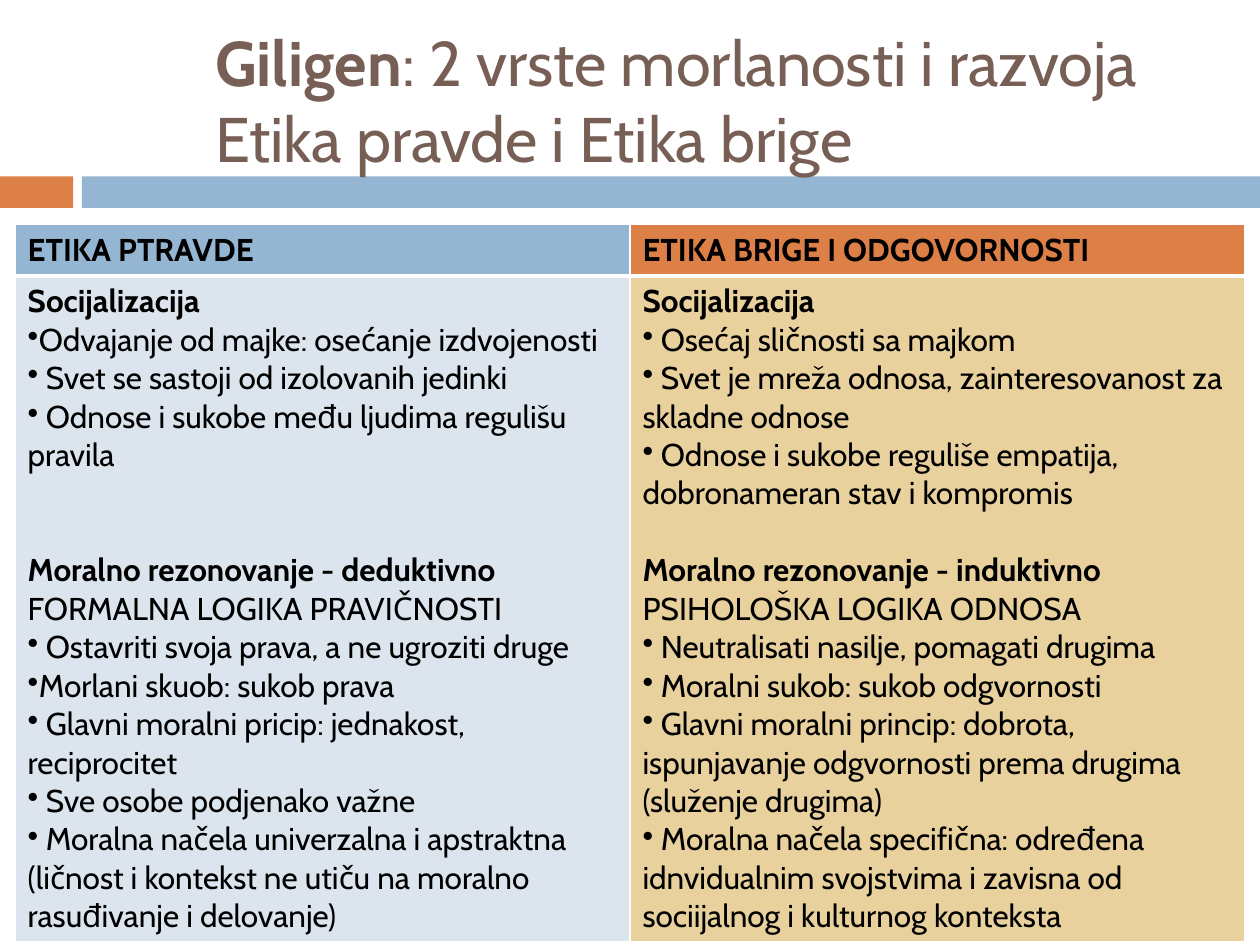
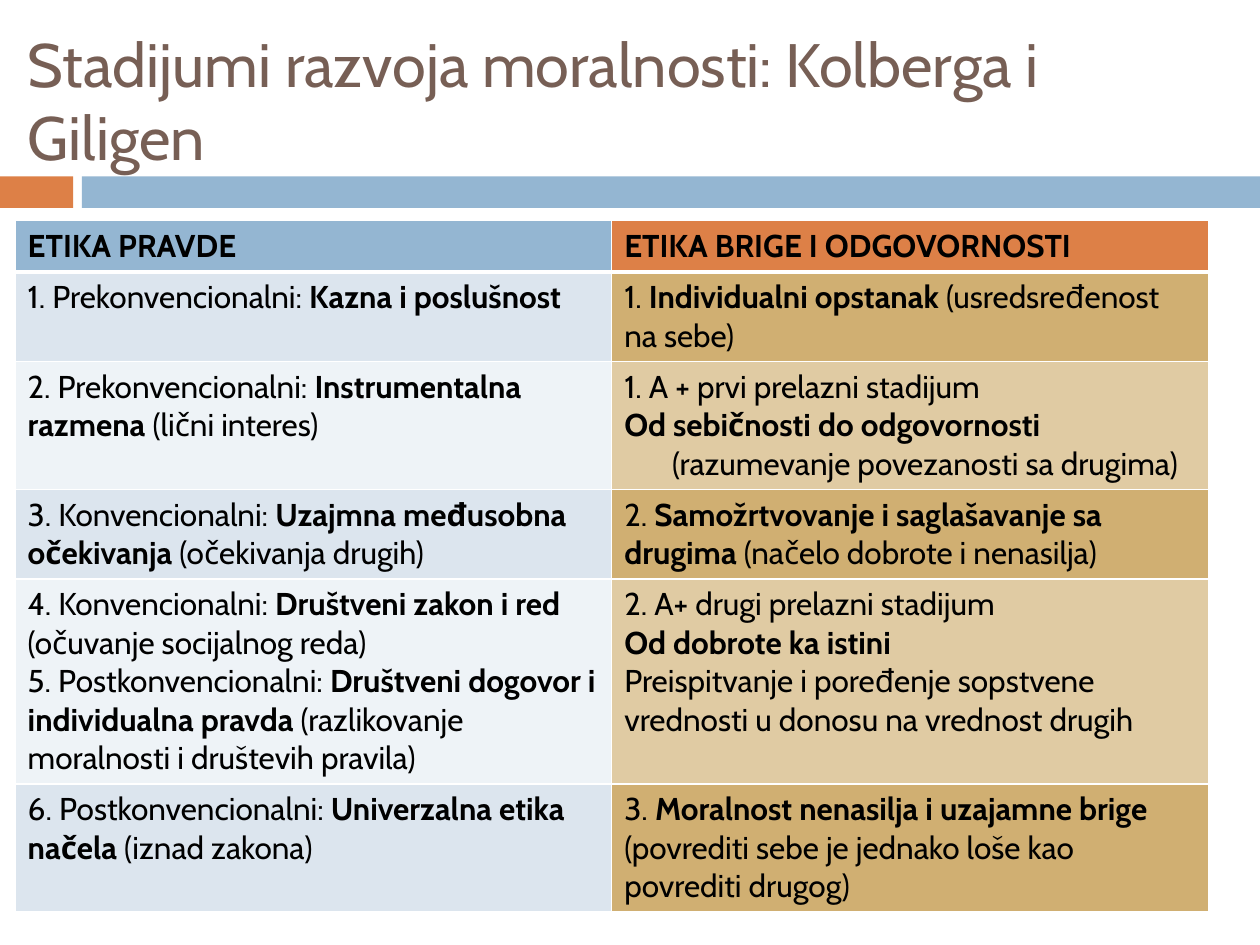
from dataclasses import dataclass

from lxml.etree import SubElement
from pptx import Presentation
from pptx.dml.color import RGBColor
from pptx.enum.shapes import MSO_SHAPE
from pptx.enum.text import MSO_ANCHOR, MSO_AUTO_SIZE, PP_ALIGN
from pptx.oxml.ns import qn
from pptx.util import Inches, Pt

FONT = "Cabin"
BODY_SIZE = 18
COLORS = {
    "title": "775F55",
    "text": "000000",
    "border": "FFFFFF",
    "blue": "94B6D2",
    "orange": "DD8047",
    "blue_mid": "DCE5EE",
    "blue_pale": "EEF3F7",
    "sand": "E8D19D",
    "ochre": "D0AF72",
    "ochre_pale": "E0CBA3",
}


@dataclass
class Band:
    left: float
    width: float
    color: str


@dataclass
class Para:
    """Stars in the text switch bold on and off."""
    text: str
    bullet: bool = False
    gap: float = 0  # space before, in points
    hanging: float = 0  # hanging indent, in inches


@dataclass
class Row:
    height: float
    cells: list[list[Para]]


@dataclass
class Page:
    title: list[str]  # one entry per forced line
    title_left: float
    title_width: float
    title_size: int
    table_top: float
    table_width: float
    body_colors: list[tuple[str, str]]  # repeated down the body rows
    rows: list[Row]


BANDS = [Band(0, 0.58, "orange"), Band(0.65, 9.35, "blue")]


def bullets(*texts: str) -> list[Para]:
    return [Para(text, bullet=True) for text in texts]


def header(left: str, right: str) -> Row:
    return Row(0.41, [[Para(f"*{left}*")], [Para(f"*{right}*")]])


def rgb(name: str) -> RGBColor:
    return RGBColor.from_string(COLORS[name])


def add_spans(para, text: str, size: float, color: str) -> None:
    for index, piece in enumerate(text.split("*")):
        if piece:
            span = para.add_run()
            span.text = piece
            span.font.name = FONT
            span.font.size = Pt(size)
            span.font.bold = index % 2 == 1
            span.font.color.rgb = rgb(color)


def add_bands(layout, page) -> None:
    """Draw the bands and hand them over to the layout."""
    for band in BANDS:
        shape = page.shapes.add_shape(
            MSO_SHAPE.RECTANGLE, Inches(band.left), Inches(1.4),
            Inches(band.width), Inches(0.25))
        shape.shadow.inherit = False
        shape.fill.solid()
        shape.fill.fore_color.rgb = rgb(band.color)
        shape.line.fill.background()
        layout.shapes._spTree.append(shape._element)


def set_title(page, content: Page) -> None:
    box = page.shapes.title
    box.left, box.top = Inches(content.title_left), Inches(0.25)
    box.width, box.height = Inches(content.title_width), Inches(1.08)
    frame = box.text_frame
    frame.word_wrap = True
    frame.auto_size = MSO_AUTO_SIZE.NONE
    frame.vertical_anchor = MSO_ANCHOR.MIDDLE
    para = frame.paragraphs[0]
    para.alignment = PP_ALIGN.LEFT
    for index, line in enumerate(content.title):
        if index:
            para.add_line_break()
        add_spans(para, line, content.title_size, "title")


def set_borders(cell, top: float, bottom: float) -> None:
    properties = cell._tc.get_or_add_tcPr()
    for side, width in (("L", 1), ("R", 1), ("T", top), ("B", bottom)):
        line = SubElement(properties, qn(f"a:ln{side}"), w=str(Pt(width)))
        fill = SubElement(line, qn("a:solidFill"))
        SubElement(fill, qn("a:srgbClr"), val=COLORS["border"])


def fill_cell(cell, paras: list[Para], color: str) -> None:
    cell.fill.solid()
    cell.fill.fore_color.rgb = rgb(color)
    frame = cell.text_frame
    for index, item in enumerate(paras):
        para = frame.add_paragraph() if index else frame.paragraphs[0]
        if item.gap:
            para.space_before = Pt(item.gap)
        properties = para._p.get_or_add_pPr()
        if item.hanging:
            properties.set("marL", str(Inches(item.hanging)))
            properties.set("indent", str(-Inches(item.hanging)))
        if item.bullet:
            SubElement(properties, qn("a:buChar"), char="•")
        add_spans(para, item.text, BODY_SIZE, "text")


def add_comparison(page, content: Page) -> None:
    height = sum(row.height for row in content.rows)
    table = page.shapes.add_table(
        len(content.rows), 2, Inches(0.12), Inches(content.table_top),
        Inches(content.table_width), Inches(height)).table
    table.horz_banding = False
    for column in table.columns:
        column.width = Inches(content.table_width / 2)
    for number, row in enumerate(content.rows):
        table.rows[number].height = Inches(row.height)
        colors = ("blue", "orange")
        if number:
            colors = content.body_colors[(number - 1) % len(content.body_colors)]
        for column, paras in enumerate(row.cells):
            cell = table.cell(number, column)
            set_borders(cell, 3 if number == 1 else 1, 3 if number == 0 else 1)
            fill_cell(cell, paras, colors[column])


PAGES = [
    # Two kinds of morality
    Page(
        ["*Giligen*: 2 vrste morlanosti i razvoja", "Etika pravde i Etika brige"],
        1.61, 7.97, 36, 1.78, 9.76, [("blue_mid", "sand")],
        [
            header("ETIKA PTRAVDE", "ETIKA BRIGE I ODGOVORNOSTI"),
            Row(5.28, [
                [
                    Para("*Socijalizacija*"),
                    *bullets(
                        "Odvajanje od majke: osećanje izdvojenosti",
                        " Svet se sastoji od izolovanih jedinki",
                        " Odnose i sukobe među ljudima regulišu pravila"),
                    Para("*Moralno rezonovanje - deduktivno*", gap=44),
                    Para("FORMALNA LOGIKA PRAVIČNOSTI"),
                    *bullets(
                        " Ostavriti svoja prava, a ne ugroziti druge",
                        "Morlani skuob: sukob prava",
                        " Glavni moralni pricip: jednakost, reciprocitet",
                        " Sve osobe podjenako važne",
                        " Moralna načela univerzalna i apstraktna (ličnost i "
                        "kontekst ne utiču na moralno rasuđivanje i delovanje)"),
                ],
                [
                    Para("*Socijalizacija*"),
                    *bullets(
                        " Osećaj sličnosti sa majkom",
                        " Svet je mreža odnosa, zainteresovanost za skladne odnose",
                        " Odnose i sukobe reguliše empatija, dobronameran stav "
                        "i kompromis"),
                    Para("*Moralno rezonovanje - induktivno*", gap=22),
                    Para("PSIHOLOŠKA LOGIKA ODNOSA"),
                    *bullets(
                        " Neutralisati nasilje, pomagati drugima",
                        " Moralni sukob: sukob odgvornosti",
                        " Glavni moralni princip: dobrota, ispunjavanje "
                        "odgvornosti prema drugima (služenje drugima)",
                        " Moralna načela specifična: određena idnvidualnim "
                        "svojstvima i zavisna od sociijalnog i kulturnog konteksta"),
                ],
            ]),
        ]),
    # Stages of moral development
    Page(
        ["Stadijumi razvoja moralnosti: Kolberga i Giligen"],
        0.12, 9.47, 35, 1.75, 9.47,
        [("blue_mid", "ochre"), ("blue_pale", "ochre_pale")],
        [
            header("ETIKA PRAVDE", "ETIKA BRIGE I ODGOVORNOSTI"),
            Row(0.71, [
                [Para("1. Prekonvencionalni: *Kazna i poslušnost*")],
                [Para("1. *Individualni opstanak* (usredsređenost na sebe)")],
            ]),
            Row(1.01, [
                [Para("2. Prekonvencionalni: *Instrumentalna razmena *"
                      "(lični interes)")],
                [Para("1. A + prvi prelazni stadijum", hanging=0.38),
                 Para("*Od sebičnosti do odgovornosti *"
                      "(razumevanje povezanosti sa drugima)", hanging=0.38)],
            ]),
            Row(0.71, [
                [Para("3. Konvencionalni: *Uzajmna međusobna očekivanja* "
                      "(očekivanja drugih)")],
                [Para("2. *Samožrtvovanje i saglašavanje sa drugima *"
                      "(načelo dobrote i nenasilja)")],
            ]),
            Row(1.62, [
                [Para("4. Konvencionalni: *Društveni zakon i red *"
                      "(očuvanje socijalnog reda)"),
                 Para("5. Postkonvencionalni: *Društveni dogovor i individualna "
                      "pravda* (razlikovanje moralnosti i društevih pravila)")],
                [Para("2. A+ drugi prelazni stadijum"),
                 Para("*Od dobrote ka istini*"),
                 Para("Preispitvanje i poređenje sopstvene vrednosti u donosu "
                      "na vrednost drugih")],
            ]),
            Row(1.01, [
                [Para("6. Postkonvencionalni: *Univerzalna etika načela* "
                      "(iznad zakona)")],
                [Para("3. *Moralnost nenasilja i uzajamne brige *"
                      "(povrediti sebe je jednako loše kao povrediti drugog)")],
            ]),
        ]),
]


def main() -> None:
    deck = Presentation()
    deck.slide_width, deck.slide_height = Inches(10), Inches(7.5)
    layout = deck.slide_layouts[5]  # title only
    for number, content in enumerate(PAGES):
        page = deck.slides.add_slide(layout)
        if number == 0:
            add_bands(layout, page)
        set_title(page, content)
        add_comparison(page, content)
    deck.save("out.pptx")


if __name__ == "__main__":
    main()
